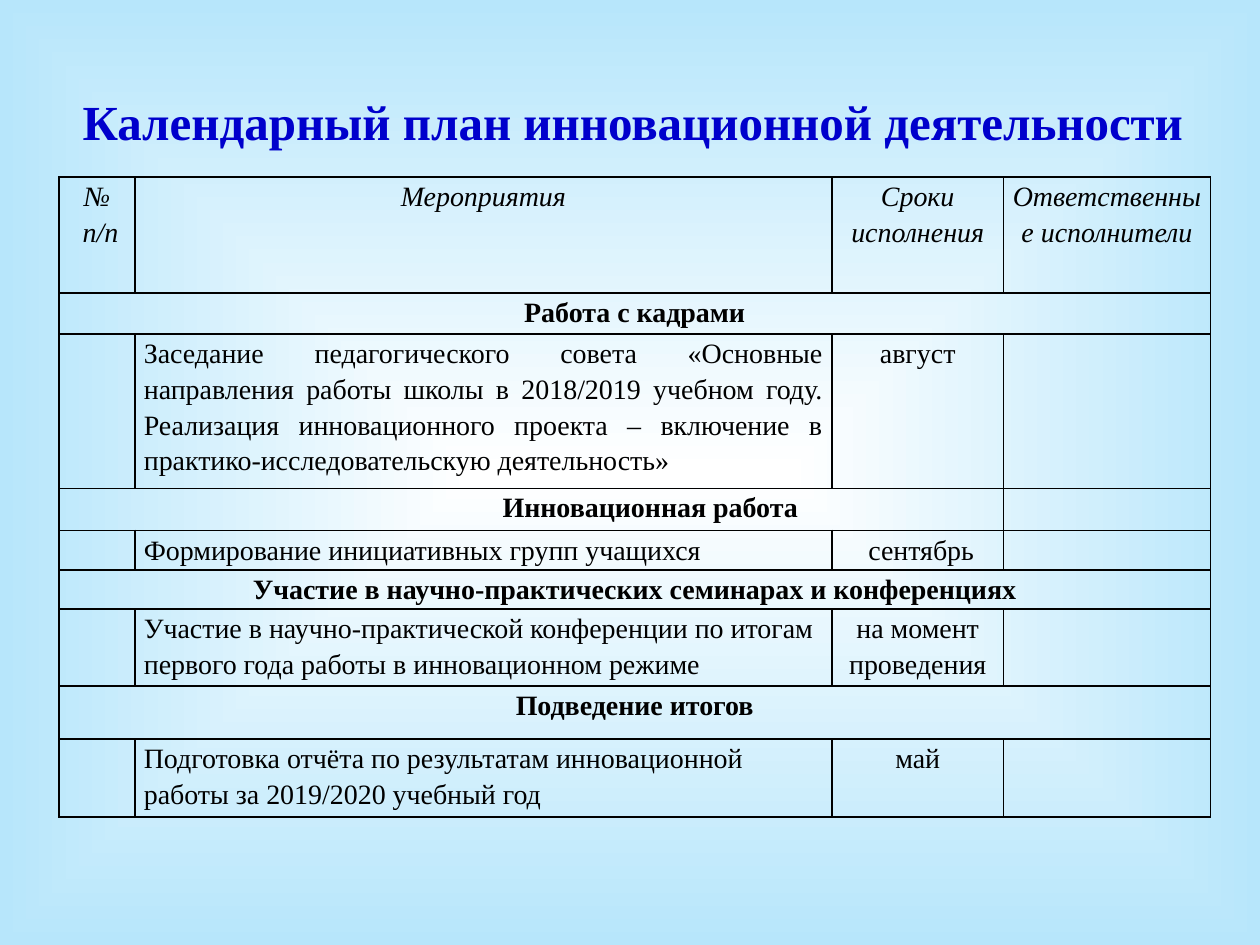
import pptx
import pptx.dml.color
import pptx.enum.text
import pptx.oxml
import pptx.oxml.ns
import pptx.util

Cm, Pt = pptx.util.Cm, pptx.util.Pt
Align = pptx.enum.text.PP_ALIGN
FONT = "Times New Roman"
NS = pptx.oxml.ns.nsdecls("a")

# Content: a plain string is a section row, a tuple is a row of cells
TITLE = "Календарный план инновационной деятельности"
HEAD = ("№\v п/п", "Мероприятия", "Сроки исполнения", "Ответственные исполнители")
ROWS = [
    HEAD,
    "Работа с кадрами",
    ("", "Заседание педагогического совета «Основные направления работы школы "
     "в 2018/2019 учебном году. Реализация инновационного проекта – включение "
     "в практико-исследовательскую деятельность»", "август", ""),
    "Инновационная работа",
    ("", "Формирование инициативных групп учащихся", " сентябрь", ""),
    "Участие в научно-практических семинарах и конференциях",
    ("", "Участие в научно-практической конференции по итогам первого года "
     "работы в инновационном режиме", "на момент проведения", ""),
    "Подведение итогов",
    ("", "Подготовка отчёта по результатам инновационной работы "
     "за 2019/2020 учебный год", "май", ""),
]
WIDTHS = [1.53, 14.05, 3.46, 4.17]
HEIGHTS = [2.34, 0.82, 3.1, 0.85, 0.8, 0.78, 1.55, 1.07, 1.57]
SHORT = 3   # this section spans three columns and sits right of centre
JUST = (2, 4)   # rows with justified text


def rgb(code):
    return pptx.dml.color.RGBColor.from_string(code)


def style(para, size, color, align, bold=False, slant=False):
    font = para.font
    font.name, font.size, font.bold, font.italic = FONT, Pt(size), bold, slant
    font.color.rgb = rgb(color)
    para.alignment = align


def frame(cell):
    """Black border on all four sides, no fill."""
    props = cell._tc.get_or_add_tcPr()
    for side in "LRTB":
        props.append(pptx.oxml.parse_xml(
            f'<a:ln{side} {NS} w="12700"><a:solidFill><a:srgbClr val="000000"/>'
            f'</a:solidFill></a:ln{side}>'))
    cell.fill.background()


def put(cell, text, align, bold=False, slant=False):
    cell.margin_left = cell.margin_right = Cm(0.18)
    cell.margin_top = cell.margin_bottom = 0
    cell.text = text
    para = cell.text_frame.paragraphs[0]
    style(para, 16, "000000", align, bold, slant)
    para.line_spacing = 1.15


deck = pptx.Presentation()
deck.slide_width, deck.slide_height = Cm(25.4), Cm(19.05)
slide = deck.slides.add_slide(deck.slide_layouts[6])

# Background: white centre fading to light blue
fill = slide.background.fill
fill.gradient()
for stop, code, pos in zip(fill.gradient_stops, ("FFFFFF", "B7E6FB"), (0, 1)):
    stop.color.rgb, stop.position = rgb(code), pos
grad = slide.background._cSld.find(".//" + pptx.oxml.ns.qn("a:gradFill"))
lin = grad.find(pptx.oxml.ns.qn("a:lin"))
grad.replace(lin, pptx.oxml.parse_xml(
    f'<a:path {NS} path="shape"><a:fillToRect l="50000" t="50000" '
    'r="50000" b="50000"/></a:path>'))

# Title
box = slide.shapes.add_textbox(Cm(1.3), Cm(1.72), Cm(22.91), Cm(1.45))
box.text_frame.word_wrap = True
box.text_frame.text = TITLE
style(box.text_frame.paragraphs[0], 28, "0000CC", Align.CENTER, bold=True)

# Table
table = slide.shapes.add_table(len(ROWS), len(WIDTHS), Cm(1.19), Cm(3.57),
                               Cm(sum(WIDTHS)), Cm(sum(HEIGHTS))).table
table.first_row = table.horz_banding = False
for col, width in zip(table.columns, WIDTHS):
    col.width = Cm(width)
for row, height in zip(table.rows, HEIGHTS):
    row.height = Cm(height)

for i, row in enumerate(ROWS):
    part = isinstance(row, str)
    texts = (row, "", "", "") if part else row
    for j, text in enumerate(texts):
        cell = table.cell(i, j)
        align = Align.CENTER
        if j == 1 and row is not HEAD:
            align = Align.JUSTIFY if i in JUST else Align.LEFT
        put(cell, text, align, bold=part, slant=row is HEAD)
        frame(cell)
    if part:
        last = 2 if i == SHORT else 3
        table.cell(i, 0).merge(table.cell(i, last))

# Indent that moves the short section title to the right
para = table.cell(SHORT, 0).text_frame.paragraphs[0]
para._p.get_or_add_pPr().set("marL", str(Cm(4.8)))

deck.save("out.pptx")
